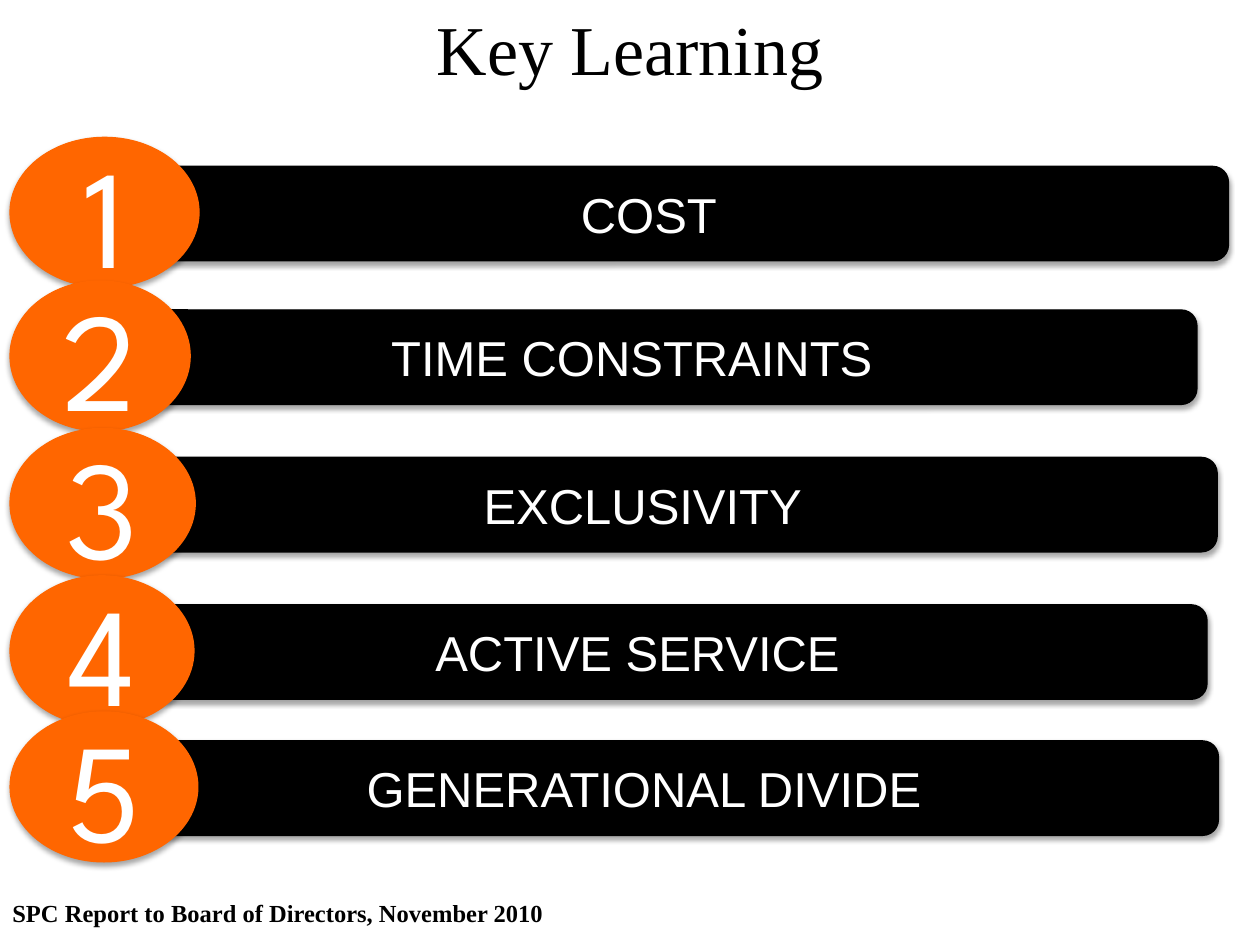
import pptx
import pptx.dml.color
import pptx.enum.shapes
import pptx.enum.text
import pptx.oxml
import pptx.oxml.ns
import pptx.util

Inches = pptx.util.Inches
Pt = pptx.util.Pt
SHAPE = pptx.enum.shapes.MSO_SHAPE
ANCHOR = pptx.enum.text.MSO_ANCHOR
ALIGN = pptx.enum.text.PP_ALIGN

COLOURS = {"ink": "000000", "paper": "FFFFFF", "badge": "FF6600"}
FORMATS = {
    "title": ({"name": "Times New Roman", "size": Pt(40), "bold": False}, "ink"),
    "footer": ({"name": "Times New Roman", "size": Pt(14), "bold": True}, "ink"),
    "bar": ({"name": "Arial", "size": Pt(28)}, "paper"),
    "number": ({"name": "League Spartan", "size": Pt(80)}, "paper"),
}
SHADOW_XML = (
    f'<a:effectLst {pptx.oxml.ns.nsdecls("a")}>'
    '<a:outerShdw blurRad="{blur}" dist="{distance}" dir="5400000" rotWithShape="0">'
    '<a:srgbClr val="{colour}"><a:alpha val="35000"/></a:srgbClr>'
    "</a:outerShdw></a:effectLst>"
)


class SlideBuilder:
    """Holds the style and the current slide."""

    def __init__(self, slide, colours, formats):
        self.slide = slide
        self.colours = colours
        self.formats = formats

    def colour(self, key):
        return pptx.dml.color.RGBColor.from_string(self.colours[key])

    def set_text(self, frame, text, style, align, anchor):
        frame.word_wrap = True
        frame.vertical_anchor = anchor
        paragraph = frame.paragraphs[0]
        paragraph.alignment = align
        run = paragraph.add_run()
        run.text = text
        values, colour = self.formats[style]
        for attribute, value in values.items():
            setattr(run.font, attribute, value)
        run.font.color.rgb = self.colour(colour)

    def title(self, text, left, top, width, height):
        heading = self.slide.shapes.title
        box = {"left": left, "top": top, "width": width, "height": height}
        for attribute, value in box.items():
            setattr(heading, attribute, Inches(value))
        self.set_text(heading.text_frame, text, "title", ALIGN.CENTER, ANCHOR.MIDDLE)

    def footer(self, text, *box):
        note = self.slide.shapes.add_textbox(*map(Inches, box))
        self.set_text(note.text_frame, text, "footer", ALIGN.LEFT, ANCHOR.TOP)

    def shape(self, group, kind, text, style, fill, *box):
        shape = group.shapes.add_shape(kind, *map(Inches, box))
        shape.fill.solid()
        shape.fill.fore_color.rgb = self.colour(fill)
        shape.line.color.rgb = self.colour(fill)
        shape.line.width = Pt(0.75)
        self.shadow(shape)
        self.set_text(shape.text_frame, text, style, ALIGN.CENTER, ANCHOR.MIDDLE)

    def shadow(self, shape):
        shape.shadow.inherit = False
        properties = shape._element.spPr
        empty = properties.find(pptx.oxml.ns.qn("a:effectLst"))
        effect = SHADOW_XML.format(
            blur=Pt(3.1), distance=Pt(1.8), colour=self.colours["ink"]
        )
        properties.replace(empty, pptx.oxml.parse_xml(effect))

    def lesson(self, number, text, top, bar_left, bar_width, badge_width):
        """A numbered badge in front of a bar, grouped."""
        group = self.slide.shapes.add_group_shape()
        self.shape(group, SHAPE.ROUNDED_RECTANGLE, text, "bar", "ink",
                   bar_left, top, bar_width, 0.75)
        self.shape(group, SHAPE.OVAL, str(number), "number", "badge",
                   0.08, top - 0.23, badge_width, 1.19)


# Text, bar top, bar left, bar width, badge width
LESSONS = [
    ("COST", 1.32, 0.55, 9.2, 1.5),
    ("TIME CONSTRAINTS", 2.46, 0.53, 8.97, 1.43),
    ("EXCLUSIVITY", 3.63, 0.54, 9.12, 1.47),
    ("ACTIVE SERVICE", 4.8, 0.54, 9.04, 1.46),
    ("GENERATIONAL DIVIDE", 5.88, 0.55, 9.12, 1.49),
]


def main():
    deck = pptx.Presentation()
    deck.slide_width, deck.slide_height = Inches(10), Inches(7.5)
    title_only = deck.slide_layouts[5]
    builder = SlideBuilder(deck.slides.add_slide(title_only), COLOURS, FORMATS)

    # Footer and title
    builder.footer("SPC Report to Board of Directors, November 2010",
                   0, 7.08, 4.83, 0.25)
    builder.title("Key Learning", 0, 0, 10, 0.75)

    # Numbered lessons
    for number, lesson in enumerate(LESSONS, start=1):
        builder.lesson(number, *lesson)

    deck.save("out.pptx")


if __name__ == "__main__":
    main()
